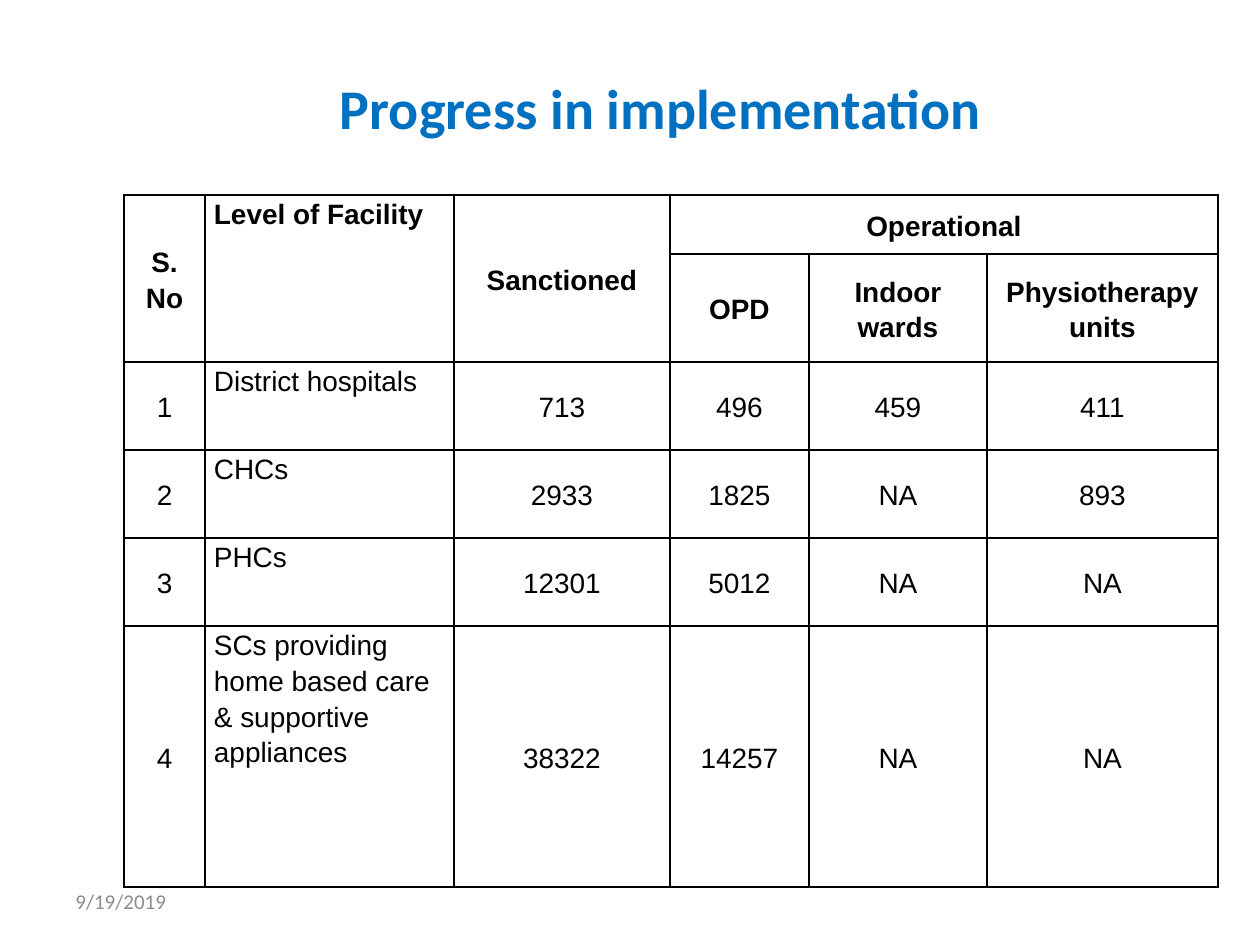
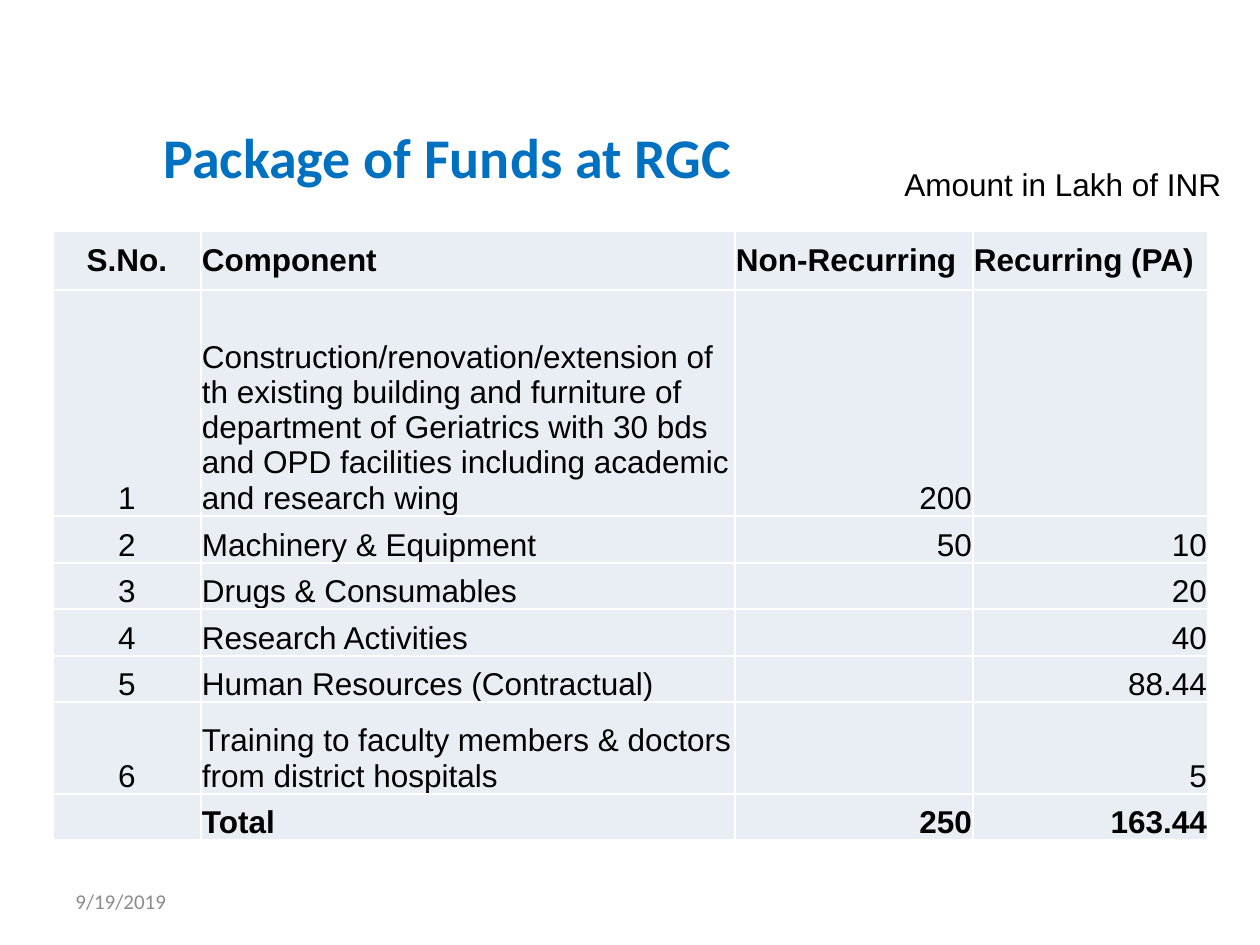
from dataclasses import dataclass

from lxml import etree
from pptx import Presentation
from pptx.dml.color import RGBColor
from pptx.enum.text import MSO_ANCHOR, PP_ALIGN
from pptx.oxml.ns import qn
from pptx.util import Emu, Pt

LEFT, CENTER, RIGHT = PP_ALIGN.LEFT, PP_ALIGN.CENTER, PP_ALIGN.RIGHT
TOP, MIDDLE, BOTTOM = MSO_ANCHOR.TOP, MSO_ANCHOR.MIDDLE, MSO_ANCHOR.BOTTOM
PIXELS_PER_INCH = 126


def px(length):
    return Emu(round(length * 914400 / PIXELS_PER_INCH))


@dataclass(frozen=True)
class Theme:
    heading_font: str = "Calibri"
    body_font: str = "Arial"
    title_color: str = "0070C0"
    text_color: str = "000000"
    footer_color: str = "8C8C8C"
    band_color: str = "E9EDF4"
    white: str = "FFFFFF"
    title_size: float = 32
    body_size: float = 18
    facility_size: float = 16
    footer_size: float = 12


@dataclass(frozen=True)
class TableStyle:
    size: float
    border: str
    fill: str | None
    margins: tuple  # left, top, right, bottom
    line_spacing: float
    alignments: tuple
    header_alignments: tuple
    anchors: tuple
    header_anchors: tuple
    header_rows: int
    bold_rows: tuple


class Deck:
    def __init__(self, theme):
        self.theme = theme
        self.presentation = Presentation()
        self.presentation.slide_width = px(1260)
        self.presentation.slide_height = px(945)
        self.slide = None

    def new_slide(self):
        self.slide = self.presentation.slides.add_slide(self.presentation.slide_layouts[6])
        self.footer("9/19/2019")

    def styled_run(self, paragraph, text, font, size, color, bold=False):
        run = paragraph.add_run()
        run.text = text
        run.font.name = font
        run.font.size = Pt(size)
        run.font.bold = bold
        run.font.color.rgb = RGBColor.from_string(color)

    def text(self, box, text, font, size, color, bold=False, align=LEFT, anchor=MIDDLE):
        shape = self.slide.shapes.add_textbox(*map(px, box))
        frame = shape.text_frame
        frame.word_wrap = True
        frame.vertical_anchor = anchor
        paragraph = frame.paragraphs[0]
        paragraph.alignment = align
        self.styled_run(paragraph, text, font, size, color, bold)

    def title(self, box, text, align):
        theme = self.theme
        self.text(box, text, theme.heading_font, theme.title_size, theme.title_color, True, align)

    def footer(self, text):
        theme = self.theme
        self.text((63, 876, 293, 50), text, theme.heading_font, theme.footer_size,
                  theme.footer_color)

    def note(self, box, text):
        theme = self.theme
        self.text(box, text, theme.body_font, theme.body_size, theme.text_color, anchor=TOP)

    def border(self, cell, color):
        properties = cell._tc.get_or_add_tcPr()
        for index, side in enumerate(("lnL", "lnR", "lnT", "lnB")):
            line = etree.Element(qn(f"a:{side}"), w=str(Pt(1)))
            fill = etree.SubElement(line, qn("a:solidFill"))
            etree.SubElement(fill, qn("a:srgbClr"), val=color)
            properties.insert(index, line)

    def table(self, origin, widths, heights, rows, style, merges=()):
        box = (*origin, sum(widths), sum(heights))
        table = self.slide.shapes.add_table(len(rows), len(widths), *map(px, box)).table
        table.first_row = table.horz_banding = False
        for column, width in zip(table.columns, widths):
            column.width = px(width)
        for row, height in zip(table.rows, heights):
            row.height = px(height)
        for row_index, values in enumerate(rows):
            for column_index, value in enumerate(values):
                self.cell(table.cell(row_index, column_index), value, row_index, column_index, style)
        for first, last in merges:
            table.cell(*first).merge(table.cell(*last))

    def cell(self, cell, value, row_index, column_index, style):
        header = row_index < style.header_rows
        alignments = style.header_alignments if header else style.alignments
        anchors = style.header_anchors if header else style.anchors
        (cell.margin_left, cell.margin_top,
         cell.margin_right, cell.margin_bottom) = map(px, style.margins)
        cell.vertical_anchor = anchors[column_index]
        if style.fill:
            cell.fill.solid()
            cell.fill.fore_color.rgb = RGBColor.from_string(style.fill)
        else:
            cell.fill.background()
        self.border(cell, style.border)
        if value:
            paragraph = cell.text_frame.paragraphs[0]
            paragraph.alignment = alignments[column_index]
            paragraph.line_spacing = style.line_spacing
            self.styled_run(paragraph, value, self.theme.body_font, style.size,
                            self.theme.text_color, row_index in style.bold_rows)


def progress_slide(deck):
    theme = deck.theme
    deck.new_slide()
    deck.title((167, 55, 987, 105), "Progress in implementation", CENTER)

    # Facilities sanctioned and operational, under a two-row header
    alignments = (CENTER, LEFT) + (CENTER,) * 4
    anchors = (MIDDLE, TOP) + (MIDDLE,) * 4
    style = TableStyle(
        size=theme.facility_size, border=theme.text_color, fill=None,
        margins=(9, 0, 9, 0), line_spacing=1.15,
        alignments=alignments, header_alignments=alignments,
        anchors=anchors, header_anchors=anchors, header_rows=2, bold_rows=(0, 1))
    rows = [
        ("S. No", "Level of Facility", "Sanctioned", "Operational", "", ""),
        ("", "", "", "OPD", "Indoor wards", "Physiotherapy units"),
        ("1", "District hospitals", "713", "496", "459", "411"),
        ("2", "CHCs", "2933", "1825", "NA", "893"),
        ("3", "PHCs", "12301", "5012", "NA", "NA"),
        ("4", "SCs providing home based care & supportive appliances",
         "38322", "14257", "NA", "NA"),
    ]
    merges = [((0, column), (1, column)) for column in range(3)] + [((0, 3), (0, 5))]
    deck.table((124, 195), (81, 249, 216, 139, 178, 231), (59, 108, 88, 88, 88, 261),
               rows, style, merges)


def funds_slide(deck):
    theme = deck.theme
    deck.new_slide()
    deck.title((151, 98, 720, 116), "Package of Funds at RGC", LEFT)
    deck.note((892, 159, 368, 50), "Amount in Lakh of INR")

    # Funds by component, closed by a total row
    style = TableStyle(
        size=theme.body_size, border=theme.white, fill=theme.band_color,
        margins=(1, 1, 1, 0), line_spacing=1.0,
        alignments=(CENTER, LEFT, RIGHT, RIGHT), header_alignments=(CENTER, LEFT, LEFT, LEFT),
        anchors=(BOTTOM,) * 4, header_anchors=(MIDDLE,) * 4, header_rows=1, bold_rows=(0, 7))
    rows = [
        ("S.No.", "Component", "Non-Recurring", "Recurring (PA)"),
        ("1", "Construction/renovation/extension of th existing building and furniture of "
              "department of Geriatrics with 30 bds and OPD facilities including academic "
              "and research wing", "200", ""),
        ("2", "Machinery & Equipment", "50", "10"),
        ("3", "Drugs & Consumables", "", "20"),
        ("4", "Research Activities", "", "40"),
        ("5", "Human Resources (Contractual)", "", "88.44"),
        ("6", "Training to faculty members & doctors from district hospitals", "", "5"),
        ("", "Total", "250", "163.44"),
    ]
    deck.table((53, 231), (148, 534, 238, 235), (59, 226, 47, 46, 47, 46, 92, 46), rows, style)


def main():
    deck = Deck(Theme())
    progress_slide(deck)
    funds_slide(deck)
    deck.presentation.save("out.pptx")


if __name__ == "__main__":
    main()
